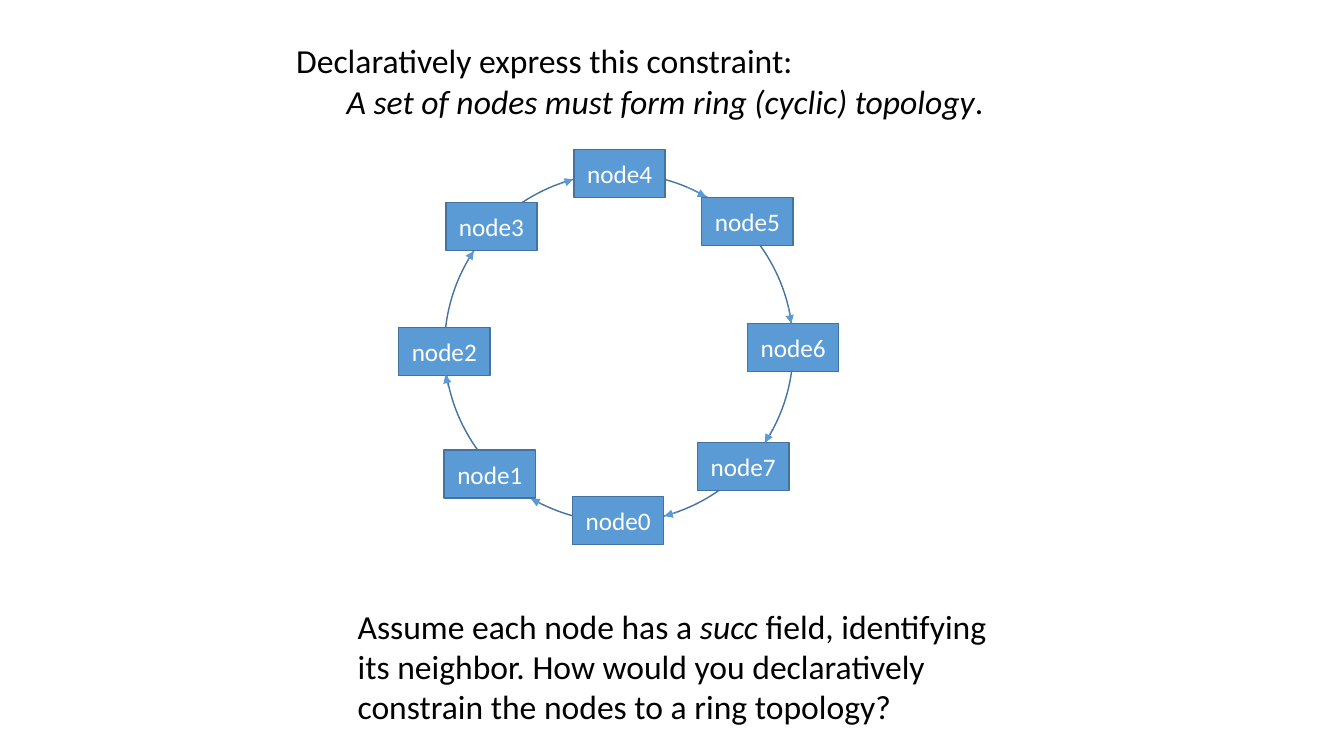
import pptx
import pptx.util
import pptx.dml.color
import pptx.enum.shapes
import pptx.enum.text
import pptx.oxml
import pptx.oxml.ns

Pt = pptx.util.Pt
SHAPES = pptx.enum.shapes.MSO_SHAPE

FONT = "Calibri"
COLORS = {"text": "000000", "label": "FFFFFF", "node": "5B9BD5", "outline": "43739E"}
NODE_WIDTH, NODE_HEIGHT = 65.2, 34.2

# Top left corner of each node; the index is the node's number
NODES = [(409, 354.7), (317.3, 321.5), (284.8, 234), (318.5, 144.7),
         (410, 106.7), (501.3, 141), (534, 231), (498.3, 316.2)]

# Arrow tips along the ring: start x, y and end x, y
ARROWS = [(320.4, 277.2, 318.2, 267.8), (334.1, 185.8, 338.4, 179.3),
          (398.9, 131.8, 409.3, 128.2), (491, 133.9, 504.4, 140.6),
          (563, 219.6, 565.2, 231.1), (551.5, 306.7, 546.5, 316.1),
          (484.6, 365.8, 474.6, 368.6), (386.6, 360, 379.4, 356.4)]


def color(name):
    return pptx.dml.color.RGBColor.from_string(COLORS[name])


def set_font(paragraph, size, name):
    paragraph.font.name = FONT
    paragraph.font.size = Pt(size)
    paragraph.font.color.rgb = color(name)


def add_text(slide, left, top, width, height, paragraphs):
    """Each paragraph is a level and a list of (text, italic) runs."""
    frame = slide.shapes.add_textbox(Pt(left), Pt(top), Pt(width), Pt(height)).text_frame
    frame.word_wrap = True
    for index, (level, runs) in enumerate(paragraphs):
        paragraph = frame.add_paragraph() if index else frame.paragraphs[0]
        paragraph.level = level
        set_font(paragraph, 24, "text")
        for text, italic in runs:
            run = paragraph.add_run()
            run.text = text
            if italic:
                run.font.italic = True


def add_outlined(shapes, kind, left, top, width, height):
    shape = shapes.add_shape(kind, Pt(left), Pt(top), Pt(width), Pt(height))
    shape.shadow.inherit = False
    shape.line.color.rgb = color("outline")
    shape.line.width = Pt(1)
    return shape


def add_node(shapes, number, left, top):
    node = add_outlined(shapes, SHAPES.RECTANGLE, left, top, NODE_WIDTH, NODE_HEIGHT)
    node.fill.solid()
    node.fill.fore_color.rgb = color("node")
    node.text_frame.vertical_anchor = pptx.enum.text.MSO_ANCHOR.MIDDLE
    label = node.text_frame.paragraphs[0]
    label.text = f"node{number}"
    label.alignment = pptx.enum.text.PP_ALIGN.CENTER
    set_font(label, 18, "label")


def add_arrow(shapes, *ends):
    arrow = shapes.add_connector(pptx.enum.shapes.MSO_CONNECTOR.STRAIGHT, *map(Pt, ends))
    arrow.line.color.rgb = color("node")
    arrow.line.width = Pt(0.5)
    tip = pptx.oxml.parse_xml(
        f'<a:tailEnd {pptx.oxml.ns.nsdecls("a")} type="triangle"/>')
    arrow.line._get_or_add_ln().append(tip)
    no_effects = pptx.oxml.parse_xml(f'<a:effectLst {pptx.oxml.ns.nsdecls("a")}/>')
    arrow._element.spPr.append(no_effects)


def add_ring(slide):
    ring = slide.shapes.add_group_shape().shapes
    circle = add_outlined(ring, SHAPES.OVAL, 317.5, 123.8, 249.1, 249.1)
    circle.fill.background()
    for number, (left, top) in enumerate(NODES):
        add_node(ring, number, left, top)
    for ends in ARROWS:
        add_arrow(ring, *ends)


def main():
    deck = pptx.Presentation()
    deck.slide_width, deck.slide_height = Pt(960), Pt(540)
    slide = deck.slides.add_slide(deck.slide_layouts[6])

    # Question below the ring
    add_text(slide, 248.4, 429.1, 480.2, 94.3, [
        (0, [("Assume each node has a ", False), ("succ", True),
             (" field, identifying its neighbor. How would you declaratively "
              "constrain the nodes to a ring topology?", False)])])

    # Ring of nodes
    add_ring(slide)

    # Constraint above the ring
    add_text(slide, 204.5, 25.2, 594, 65.5, [
        (0, [("Declaratively express this constraint:", False)]),
        (1, [("A set of nodes must form ring (cyclic) topology", True), (".", False)])])

    deck.save("out.pptx")


if __name__ == "__main__":
    main()
